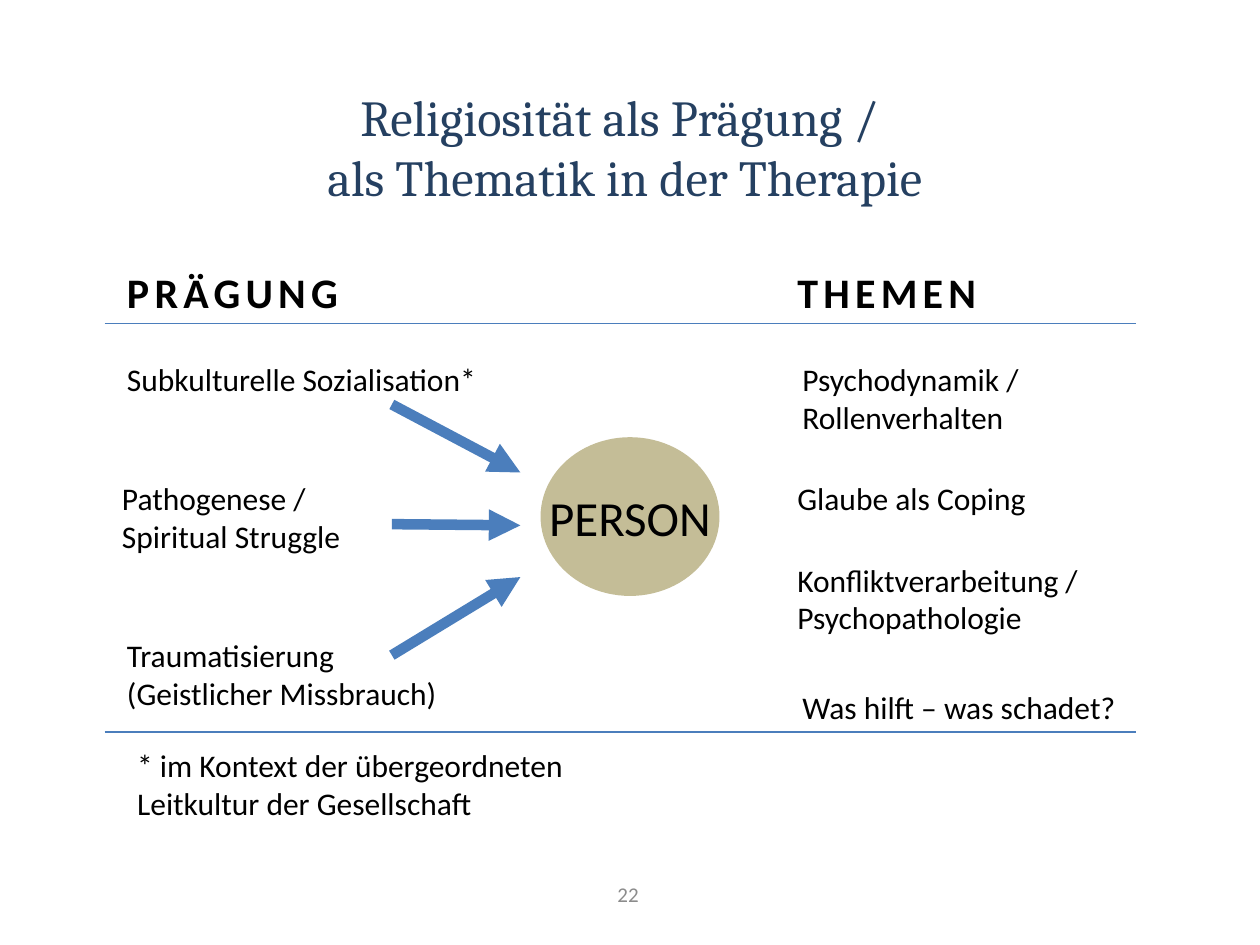
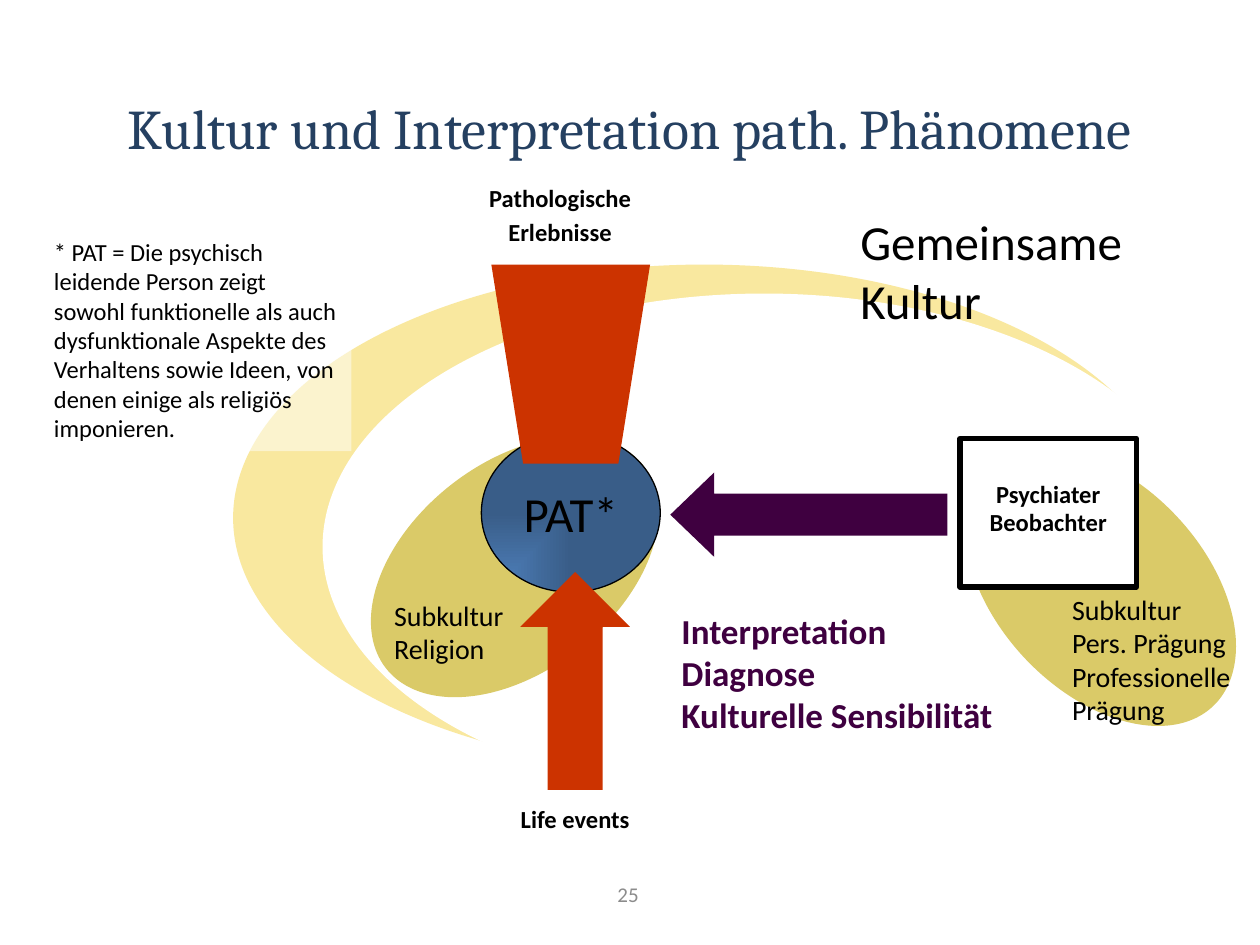
from dataclasses import dataclass

from lxml.etree import SubElement
from pptx import Presentation
from pptx.dml.color import RGBColor
from pptx.enum.shapes import MSO_CONNECTOR, MSO_SHAPE
from pptx.enum.text import MSO_ANCHOR, PP_ALIGN
from pptx.oxml import parse_xml
from pptx.oxml.ns import nsdecls, qn
from pptx.util import Inches, Pt


@dataclass(frozen=True)
class Theme:
    # Fonts
    title_font: str = "Cambria"
    body_font: str = "Calibri"
    # Colours
    title: str = "254061"
    text: str = "000000"
    page_number: str = "8C8C8C"
    line: str = "4B7EBC"
    person: str = "C4BD97"
    patient: str = "4F81BD"
    culture: str = "F9E89F"
    subculture: str = "DACA68"
    influence: str = "CC3300"
    interpretation: str = "3F0040"
    paper: str = "FFFFFF"
    # Type sizes
    title_size: float = 32
    long_title_size: float = 28.8
    large: float = 28
    heading: float = 24
    emphasis: float = 20
    body: float = 18
    label: float = 16
    small: float = 14
    footer: float = 12


THEME = Theme()


def rgb(colour):
    return RGBColor.from_string(colour)


def write(shape, lines, size, colour=THEME.text, font=THEME.body_font, bold=False,
          align=PP_ALIGN.LEFT, anchor=MSO_ANCHOR.TOP, wrap=True, gap=0, hanging=False,
          tracking=0):
    """Fill a shape with one paragraph per line; \\v breaks a line."""
    frame = shape.text_frame
    frame.word_wrap = wrap
    frame.vertical_anchor = anchor
    for index, line in enumerate(lines):
        paragraph = frame.paragraphs[0] if index == 0 else frame.add_paragraph()
        paragraph.text = line
        paragraph.alignment = align
        if index and gap:
            paragraph.space_before = Pt(gap)
        if hanging:
            properties = paragraph._p.get_or_add_pPr()
            properties.set("marL", str(Inches(0.38)))
            properties.set("indent", str(Inches(-0.38)))
        paragraph.font.name = font
        paragraph.font.size = Pt(size)
        paragraph.font.bold = bold
        paragraph.font.color.rgb = rgb(colour)
        if tracking:
            for run in paragraph.runs:
                run._r.get_or_add_rPr().set("spc", str(tracking * 100))


def add_text(slide, box, lines, size, **style):
    text = slide.shapes.add_textbox(*map(Inches, box))
    write(text, lines, size, **style)
    return text


def add_block(slide, preset, box, fill, rotation=0, outline=None, adjustments=()):
    block = slide.shapes.add_shape(preset, *map(Inches, box))
    block.shadow.inherit = False
    block.rotation = rotation
    block.fill.solid()
    block.fill.fore_color.rgb = rgb(fill)
    if outline:
        block.line.color.rgb = rgb(THEME.text)
        block.line.width = Pt(outline)
    else:
        block.line.fill.background()
    for index, value in enumerate(adjustments):
        block.adjustments[index] = value
    return block


def add_circle(slide, left, top, fill, caption, outline=None):
    circle = add_block(slide, MSO_SHAPE.OVAL, (left, top, 1.42, 1.26), fill, outline=outline)
    write(circle, [caption], THEME.large, align=PP_ALIGN.CENTER,
          anchor=MSO_ANCHOR.MIDDLE, wrap=False, hanging=True)
    return circle


def add_line(slide, start, end, width, arrow=False):
    line = slide.shapes.add_connector(MSO_CONNECTOR.STRAIGHT, *map(Inches, start + end))
    line.line.color.rgb = rgb(THEME.line)
    line.line.width = Pt(width)
    if arrow:
        SubElement(line.line._get_or_add_ln(), qn("a:tailEnd"), type="triangle")
    SubElement(line._element.spPr, qn("a:effectLst"))


def shade_from_corner(shape, colour):
    """Darken a fill outwards from its lower left corner."""
    gradient = parse_xml(
        f'<a:gradFill {nsdecls("a")} rotWithShape="1"><a:gsLst>'
        f'<a:gs pos="0"><a:srgbClr val="{colour}"/></a:gs>'
        f'<a:gs pos="100000"><a:srgbClr val="{colour}"><a:shade val="47500"/></a:srgbClr></a:gs>'
        '</a:gsLst><a:path path="rect"><a:fillToRect t="100000" r="100000"/></a:path></a:gradFill>'
    )
    properties = shape._element.spPr
    properties.replace(properties.find(qn("a:solidFill")), gradient)


def add_title(slide, left, top, title, size):
    add_text(slide, (left, top, 9, 0.9), [title], size, colour=THEME.title,
             font=THEME.title_font, align=PP_ALIGN.CENTER, anchor=MSO_ANCHOR.MIDDLE)


def new_slide(deck, number):
    slide = deck.slides.add_slide(deck.slide_layouts[6])
    add_text(slide, (3.82, 6.9, 2.33, 0.4), [number], THEME.footer,
             colour=THEME.page_number, align=PP_ALIGN.CENTER, anchor=MSO_ANCHOR.MIDDLE)
    return slide


def build_influences(deck):
    slide = new_slide(deck, "22")
    add_title(slide, 0.46, 0.71, "Religiosität als Prägung / \vals Thematik in der Therapie",
              THEME.long_title_size)
    add_circle(slide, 4.29, 3.47, THEME.person, "PERSON")

    # Column headings
    for left, heading in ((0.91, "PRÄGUNG"), (6.23, "THEMEN")):
        add_text(slide, (left, 2.07, 3.46, 0.5), [heading], THEME.heading, bold=True, tracking=3)

    # Influences on the left, topics on the right
    entries = (
        (0.91, 2.81, ["Subkulturelle Sozialisation*"]),
        (0.87, 3.75, ["Pathogenese / \vSpiritual Struggle"]),
        (0.91, 5, ["Traumatisierung", "(Geistlicher Missbrauch)"]),
        (6.27, 2.81, ["Psychodynamik / Rollenverhalten"]),
        (6.23, 3.75, ["Glaube als Coping"]),
        (6.23, 4.4, ["Konfliktverarbeitung / Psychopathologie"]),
        (6.27, 5.41, ["Was hilft – was schadet?"]),
    )
    for left, top, lines in entries:
        add_text(slide, (left, top, 3.23, 0.71), lines, THEME.body)

    # Arrows towards the person
    for start, end in ((3.21, 3.75), (4.16, 4.17), (5.2, 4.58)):
        add_line(slide, (3.11, start), (4.13, end), 6, arrow=True)

    # Rules and footnote
    for rule in (2.57, 5.81):
        add_line(slide, (0.83, rule), (9.02, rule), 0.75)
    add_text(slide, (0.99, 5.87, 4.25, 0.71),
             ["* im Kontext der übergeordneten Leitkultur der Gesellschaft"], THEME.body)


def build_interpretation(deck):
    slide = new_slide(deck, "25")

    # Crescent of the shared culture and the patient's subculture
    add_block(slide, MSO_SHAPE.OVAL, (1.85, 2.1, 7.48, 4.02), THEME.culture)
    add_block(slide, MSO_SHAPE.OVAL, (2.56, 2.33, 7.01, 4.02), THEME.paper)
    add_block(slide, MSO_SHAPE.OVAL, (3.26, 3.2, 1.65, 2.6), THEME.subculture, rotation=51.7)
    add_title(slide, 0.5, 0.56, "Kultur und Interpretation path. Phänomene", THEME.title_size)

    # Patient
    patient = add_circle(slide, 3.82, 3.44, THEME.patient, "PAT*", outline=0.75)
    shade_from_corner(patient, THEME.patient)
    add_text(slide, (3.03, 4.7, 1.65, 0.64), ["Subkultur", "Religion"], THEME.label, hanging=True)
    add_text(slide, (6.73, 1.63, 3.2, 1.04), ["Gemeinsame Kultur"], THEME.large)

    # Experiences and life events acting on the patient
    add_block(slide, MSO_SHAPE.UP_ARROW, (4.13, 4.54, 0.87, 1.73), THEME.influence,
              adjustments=(0.5, 0.5))
    add_block(slide, MSO_SHAPE.FLOWCHART_MANUAL_OPERATION, (3.9, 2.1, 1.26, 1.58),
              THEME.influence)
    add_text(slide, (3.5, 1.4, 1.89, 0.62), ["Pathologische", "Erlebnisse"], THEME.small,
             bold=True, align=PP_ALIGN.CENTER, gap=2.8)
    add_text(slide, (3.5, 6.33, 2.13, 0.34), ["Life events"], THEME.small,
             bold=True, align=PP_ALIGN.CENTER)

    # Observer with a subculture of their own
    add_block(slide, MSO_SHAPE.LEFT_ARROW, (5.32, 3.75, 2.2, 0.67), THEME.interpretation,
              adjustments=(0.5, 0.52))
    add_block(slide, MSO_SHAPE.OVAL, (7.91, 3.36, 1.65, 2.6), THEME.subculture, rotation=316.7)
    observer = add_block(slide, MSO_SHAPE.RECTANGLE, (7.62, 3.48, 1.4, 1.18), THEME.paper,
                         outline=3)
    write(observer, ["Psychiater", "Beobachter"], THEME.small, bold=True,
          align=PP_ALIGN.CENTER, anchor=MSO_ANCHOR.MIDDLE)
    observer.text_frame.paragraphs[0].line_spacing = 0.6
    add_text(slide, (8.41, 4.65, 1.65, 1.45),
             ["Subkultur", "Pers. Prägung", "Professionelle", "Prägung"], THEME.label)
    add_text(slide, (5.31, 4.79, 3.55, 1.11),
             ["Interpretation", "Diagnose", "Kulturelle Sensibilität"], THEME.emphasis,
             colour=THEME.interpretation, bold=True)

    # Footnote on a translucent panel
    footnote = add_text(
        slide, (0.33, 1.83, 2.46, 1.75),
        ["* PAT = Die psychisch leidende Person zeigt sowohl funktionelle als auch "
         "dysfunktionale Aspekte des Verhaltens sowie Ideen, von denen einige als "
         "religiös imponieren."], THEME.small)
    footnote.fill.solid()
    footnote.fill.fore_color.rgb = rgb(THEME.paper)
    colour = footnote._element.spPr.find(qn("a:solidFill"))[0]
    SubElement(colour, qn("a:alpha"), val="49000")


def main():
    deck = Presentation()
    deck.slide_width = Inches(10)
    deck.slide_height = Inches(7.5)
    build_influences(deck)
    build_interpretation(deck)
    deck.save("out.pptx")


if __name__ == "__main__":
    main()
